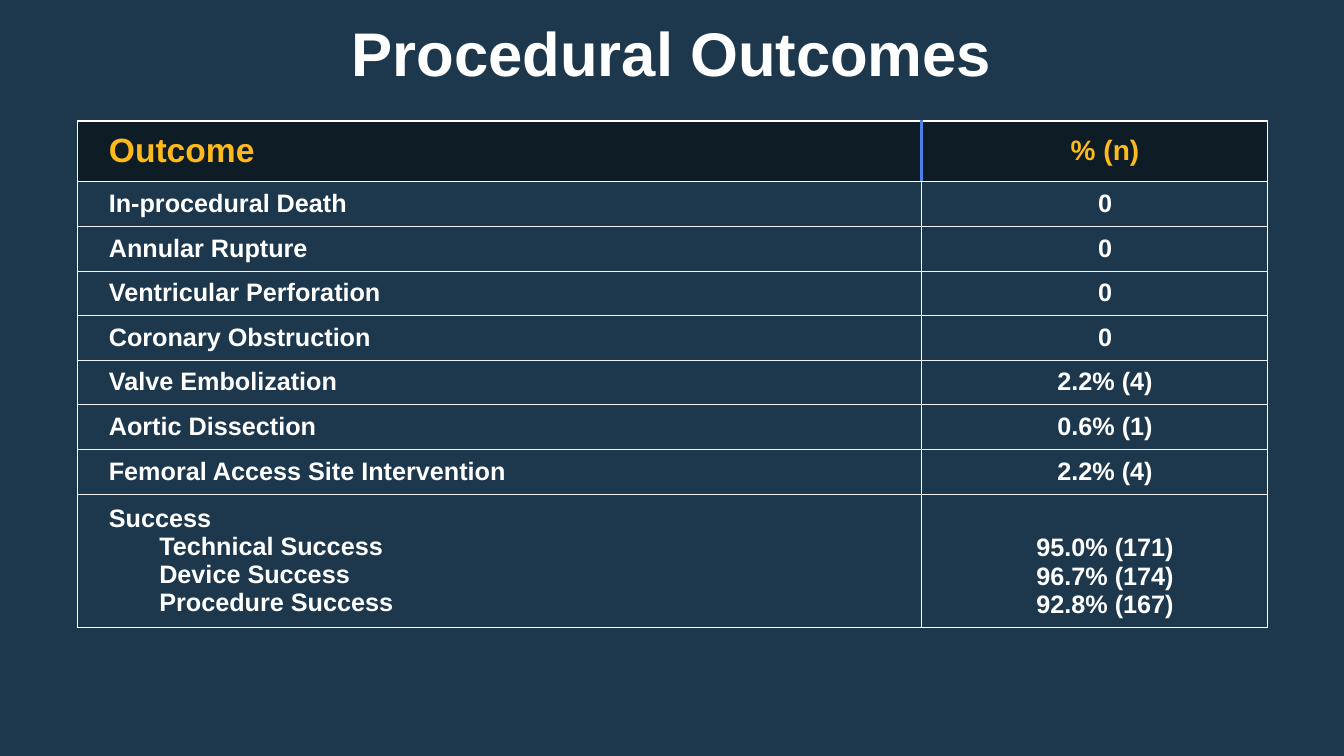
from pptx import Presentation
from pptx.dml.color import RGBColor as RGB
from pptx.enum.text import MSO_ANCHOR as ANCHOR, MSO_AUTO_SIZE as AUTO, PP_ALIGN as ALIGN
from pptx.oxml import parse_xml
from pptx.oxml.ns import nsdecls
from pptx.util import Inches, Pt

# Content
TITLE = "Procedural Outcomes"
HEADER = ("Outcome", "% (n)")
OUTCOMES = [
    ("In-procedural Death", "0"),
    ("Annular Rupture", "0"),
    ("Ventricular Perforation", "0"),
    ("Coronary Obstruction", "0"),
    ("Valve Embolization", "2.2% (4)"),
    ("Aortic Dissection", "0.6% (1)"),
    ("Femoral Access Site Intervention", "2.2% (4)"),
]
SUCCESS = ("Success", [
    ("Technical Success", "95.0% (171)"),
    ("Device Success", "96.7% (174)"),
    ("Procedure Success", "92.8% (167)"),
])
COLORS = {"back": "1D384C", "header": "0E1C26", "gold": "FEB91A",
          "white": "FFFFFF", "rule": "F2F2F2", "blue": "4F81E5"}

# Layout in inches
WIDTH, HEIGHT = 13.33, 7.5
LEFT, TOP, TABLE_W, TABLE_H = 0.77, 1.2, 11.8, 5.03
NAME_W, HEADER_H, SUCCESS_H = 8.37, 0.6, 1.33
OUTCOME_H = (TABLE_H - HEADER_H - SUCCESS_H) / len(OUTCOMES)


def color(name):
    return RGB.from_string(COLORS[name])


def write(tf, lines, size=18, fill="white", align=ALIGN.LEFT):
    """Write (text, indent level) lines, one paragraph each."""
    for i, (text, level) in enumerate(lines):
        p = tf.paragraphs[0] if i == 0 else tf.add_paragraph()
        p.alignment = align
        if level:
            p.level = level
            pPr = p._p.get_or_add_pPr()
            pPr.set("marL", str(Inches(0.5) * level))
            pPr.set("indent", "0")
        r = p.add_run()
        r.text = text
        r.font.name, r.font.size, r.font.bold = "Arial", Pt(size), True
        r.font.color.rgb = color(fill)


def set_borders(cell, **sides):
    tcPr = cell._tc.get_or_add_tcPr()
    for i, side in enumerate("LRTB"):
        name, width = sides[side]
        tcPr.insert(i, parse_xml(
            f'<a:ln{side} {nsdecls("a")} w="{Pt(width)}"><a:solidFill>'
            f'<a:srgbClr val="{COLORS[name]}"/></a:solidFill></a:ln{side}>'))


prs = Presentation()
prs.slide_width, prs.slide_height = Inches(WIDTH), Inches(HEIGHT)
s = prs.slides.add_slide(prs.slide_layouts[5])
s.background.fill.solid()
s.background.fill.fore_color.rgb = color("back")

# Title
title = s.shapes.title
title.left, title.top = Inches(1), Inches(0.1)
title.width, title.height = Inches(WIDTH - 2), Inches(0.83)
tf = title.text_frame
tf.auto_size, tf.vertical_anchor, tf.word_wrap = AUTO.NONE, ANCHOR.MIDDLE, True
tf.margin_left = tf.margin_right = tf.margin_top = tf.margin_bottom = Inches(0.05)
write(tf, [(TITLE, 0)], size=44, align=ALIGN.CENTER)

# Table rows as lists of lines for each cell
group, parts = SUCCESS
rows = [[[(text, 0)] for text in row] for row in [HEADER, *OUTCOMES]]
rows.append([[(group, 0)] + [(name, 1) for name, _ in parts],
             [(value, 0) for _, value in parts]])
heights = [HEADER_H] + [OUTCOME_H] * len(OUTCOMES) + [SUCCESS_H]
last = len(rows) - 1

table = s.shapes.add_table(len(rows), 2, Inches(LEFT), Inches(TOP),
                           Inches(TABLE_W), Inches(TABLE_H)).table
table.horz_banding = False
for column, width in zip(table.columns, (NAME_W, TABLE_W - NAME_W)):
    column.width = Inches(width)

frame, rule, divider = ("white", 1), ("rule", 0.25), ("blue", 2.25)
for i, (row, height) in enumerate(zip(rows, heights)):
    table.rows[i].height = Inches(height)
    for j, lines in enumerate(row):
        cell = table.cell(i, j)
        head = i == 0
        cell.fill.solid()
        cell.fill.fore_color.rgb = color("header" if head else "back")
        cell.vertical_anchor = ANCHOR.MIDDLE
        cell.margin_left, cell.margin_right = Inches(0.31), Inches(0.1)
        cell.margin_top = cell.margin_bottom = Inches(0.05)
        if i == last and j == 1:  # values line up with the indented names
            cell.vertical_anchor = ANCHOR.BOTTOM
            cell.margin_bottom = Inches(0.09)
        write(cell.text_frame, lines, size=(24, 20)[j] if head else 18,
              fill="gold" if head else "white",
              align=ALIGN.CENTER if j else ALIGN.LEFT)
        set_borders(cell,
                    L=divider if head and j else frame,
                    R=divider if head and not j else frame,
                    T=frame if i < 2 else rule,
                    B=frame if i in (0, last) else rule)

prs.save("out.pptx")
